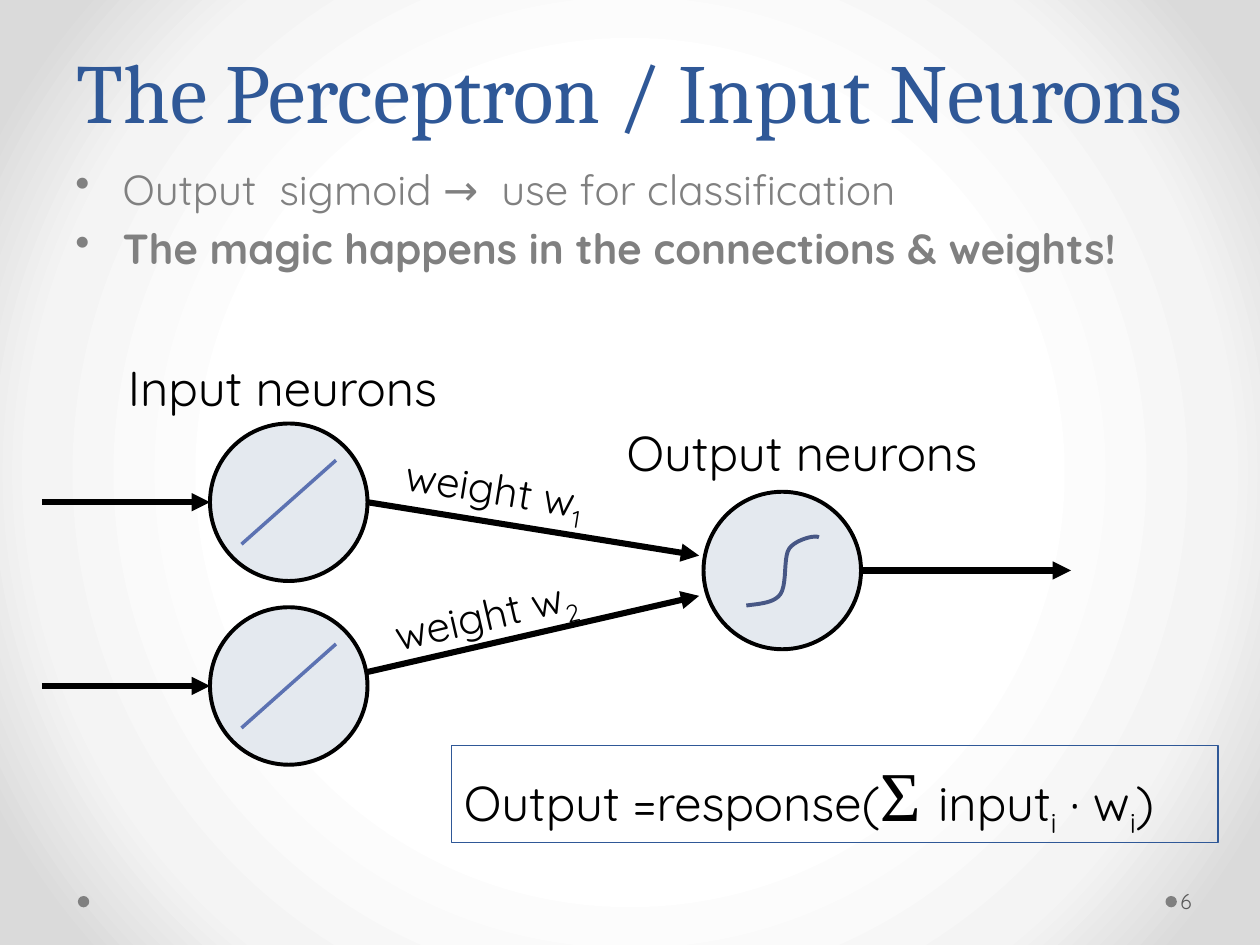
from lxml.etree import SubElement
from pptx import Presentation
from pptx.dml.color import RGBColor
from pptx.enum.shapes import MSO_CONNECTOR, MSO_SHAPE
from pptx.enum.text import MSO_ANCHOR, MSO_AUTO_SIZE, PP_ALIGN
from pptx.oxml.ns import qn
from pptx.util import Pt

BLACK, BLUE, GREY = "000000", "2F5897", "808080"
SANS, SERIF, SYMBOL = "Quicksand", "Cambria", "Times New Roman"
NEURON_SIZE = 90
SIGMOID = [(24.5, 65), (32.5, 64), (40.5, 63.5), (44, 58.5), (48, 52.5),
           (45.5, 37.5), (49, 32.5), (52.5, 27.5), (63.5, 24.5), (66, 26)]


def rgb(color):
    return RGBColor.from_string(color)


def style_line(line, color, width):
    line.color.rgb = rgb(color)
    line.width = Pt(width)


def set_font(font, size, color=BLACK, name=SANS):
    font.size, font.name, font.color.rgb = Pt(size), name, rgb(color)


def set_background(slide):
    """Radial gradient, white in the middle and grey at the corners."""
    slide.background.fill.gradient()
    gradient = slide.element.find(".//" + qn("a:gradFill"))
    for child in list(gradient):
        gradient.remove(child)
    stops = SubElement(gradient, qn("a:gsLst"))
    for percent, color in ((50, "FFFFFF"), (76, "F4F4F4"), (92, "DADADA")):
        stop = SubElement(stops, qn("a:gs"), pos=str(percent * 1000))
        SubElement(stop, qn("a:srgbClr"), val=color)
    circle = SubElement(gradient, qn("a:path"), path="circle")
    SubElement(circle, qn("a:fillToRect"), {side: "50000" for side in "ltrb"})


def add_text_frame(slide, left, top, width, height, rotation=0):
    box = slide.shapes.add_textbox(Pt(left), Pt(top), Pt(width), Pt(height))
    box.rotation = rotation
    box.text_frame.word_wrap = True
    return box.text_frame


def add_label(slide, left, top, width, height, text, size, subscript="", rotation=0):
    frame = add_text_frame(slide, left, top, width, height, rotation)
    frame.auto_size = MSO_AUTO_SIZE.SHAPE_TO_FIT_TEXT
    label = frame.paragraphs[0]
    set_font(label.font, size)
    label.add_run().text = text
    if subscript:
        add_subscript(label, subscript)


def add_subscript(paragraph, text):
    run = paragraph.add_run()
    run.text = text
    run.font._element.set("baseline", "-25000")


def add_line(slide, start, end, color=BLACK, width=3.5, arrow=True):
    line = slide.shapes.add_connector(
        MSO_CONNECTOR.STRAIGHT, *(Pt(value) for value in (*start, *end)))
    style_line(line.line, color, width)
    SubElement(line._element.spPr, qn("a:effectLst"))
    if arrow:
        SubElement(line.line._get_or_add_ln(), qn("a:tailEnd"), type="triangle")


def add_circle(slide, left, top, size, fill):
    circle = slide.shapes.add_shape(MSO_SHAPE.OVAL, Pt(left), Pt(top), Pt(size), Pt(size))
    circle.shadow.inherit = False
    circle.fill.solid()
    circle.fill.fore_color.rgb = rgb(fill)
    circle.line.fill.background()
    return circle


def add_neuron(slide, left, top):
    style_line(add_circle(slide, left, top, NEURON_SIZE, "E4E9EF").line, BLACK, 2.25)


def add_linear_neuron(slide, left, top):
    add_neuron(slide, left, top)
    add_line(slide, (left + 18, top + 69), (left + 72, top + 21), "5C72B2", 2, arrow=False)


def bezier_points(controls, steps=10):
    """Points along a chain of cubic curves that share their end points."""
    points = [controls[0]]
    for first in range(0, len(controls) - 1, 3):
        for step in range(1, steps + 1):
            t = step / steps
            weights = ((1 - t) ** 3, 3 * t * (1 - t) ** 2, 3 * t * t * (1 - t), t ** 3)
            corners = zip(*controls[first:first + 4])
            points.append(tuple(sum(w * c for w, c in zip(weights, axis)) for axis in corners))
    return points


def add_sigmoid_neuron(slide, left, top):
    add_neuron(slide, left, top)
    start, *rest = [(Pt(left + x), Pt(top + y)) for x, y in bezier_points(SIGMOID)]
    builder = slide.shapes.build_freeform(*start)
    builder.add_line_segments(rest, close=False)
    curve = builder.convert_to_shape()
    curve.shadow.inherit = False
    curve.fill.background()
    style_line(curve.line, "475785", 2.25)


def add_title(slide, left, top, width, height):
    frame = add_text_frame(slide, left, top, width, height)
    frame.vertical_anchor = MSO_ANCHOR.BOTTOM
    title = frame.paragraphs[0]
    title.text = "The Perceptron / Input Neurons"
    title.alignment = PP_ALIGN.CENTER
    title.line_spacing = Pt(58)
    set_font(title.font, 48, BLUE, SERIF)


def add_bullets(slide, left, top, width, height):
    frame = add_text_frame(slide, left, top, width, height)
    points = (("Output  sigmoid →  use for classification", False),
              ("The magic happens in the connections & weights!", True))
    for index, (text, bold) in enumerate(points):
        point = frame.add_paragraph() if index else frame.paragraphs[0]
        point.text = text
        point.space_before = Pt(4.8)
        set_font(point.font, 24, GREY)
        point.font.bold = bold
        properties = point._p.get_or_add_pPr()
        properties.set("marL", str(Pt(27)))
        properties.set("indent", str(-Pt(27)))
        bullet = properties.makeelement(qn("a:buChar"), {"char": "•"})
        properties.find(qn("a:defRPr")).addprevious(bullet)


def add_network(slide, left, top):
    """Two linear input neurons feeding one sigmoid output neuron."""
    input_left, output_left = left + 96, left + 378
    input_right, output_right = input_left + NEURON_SIZE, output_left + NEURON_SIZE
    output_top = top + 80
    add_label(slide, left + 42, top, 224, 41, "Input neurons", 28)
    add_label(slide, left + 327, top + 37, 254, 41, "Output neurons", 28)
    connections = ((top + 41, 45, 36.5), (top + 146, 37, 59.5))
    for input_top, exit_drop, entry_drop in connections:
        middle = input_top + NEURON_SIZE / 2
        add_linear_neuron(slide, input_left, input_top)
        add_line(slide, (left, middle), (input_left, middle))
        add_line(slide, (input_right, input_top + exit_drop),
                 (output_left - 2.5, output_top + entry_drop))
    add_sigmoid_neuron(slide, output_left, output_top)
    middle = output_top + NEURON_SIZE / 2
    add_line(slide, (output_right, middle), (output_right + 120, middle))
    add_label(slide, left + 200, top + 64, 168, 36, "weight w", 24, "1", 9.2)
    add_label(slide, left + 193, top + 129, 147, 36, "weight w", 24, "2", 347)


def add_formula(slide, left, top, width, height):
    box = slide.shapes.add_shape(
        MSO_SHAPE.RECTANGLE, Pt(left), Pt(top), Pt(width), Pt(height))
    box.shadow.inherit = False
    box.fill.background()
    style_line(box.line, BLUE, 0.75)
    box.text_frame.vertical_anchor = MSO_ANCHOR.TOP
    formula = box.text_frame.paragraphs[0]
    formula.alignment = PP_ALIGN.LEFT
    set_font(formula.font, 28)
    formula.add_run().text = "Output =response("
    total = formula.add_run()
    total.text = "Σ "
    set_font(total.font, 40, name=SYMBOL)
    for text, subscript in (("input", "i"), (" · w", "i")):
        formula.add_run().text = text
        add_subscript(formula, subscript)
    formula.add_run().text = ")"
    for run in formula.runs:
        run.font.color.rgb = rgb(BLACK)


def add_footer(slide, left, top, width, height):
    dot_size = 6.5
    for dot_left in (left, left + 621.5):
        add_circle(slide, dot_left, top + 11.5, dot_size, GREY)
    frame = add_text_frame(slide, left + 628, top, width - 628, height)
    frame.margin_left = Pt(2)
    frame.margin_right = Pt(3.6)
    frame.vertical_anchor = MSO_ANCHOR.MIDDLE
    frame.text = "6"
    set_font(frame.paragraphs[0].font, 12, "595959")


def main():
    deck = Presentation()
    deck.slide_width, deck.slide_height = Pt(720), Pt(540)
    slide = deck.slides.add_slide(deck.slide_layouts[6])
    set_background(slide)
    add_title(slide, 0, 0, 720, 84)
    add_bullets(slide, 36, 90, 648, 111)
    add_network(slide, 24, 201)
    add_formula(slide, 258, 426, 438, 55.5)
    add_footer(slide, 44.5, 500.5, 672, 29)
    deck.save("out.pptx")


if __name__ == "__main__":
    main()
